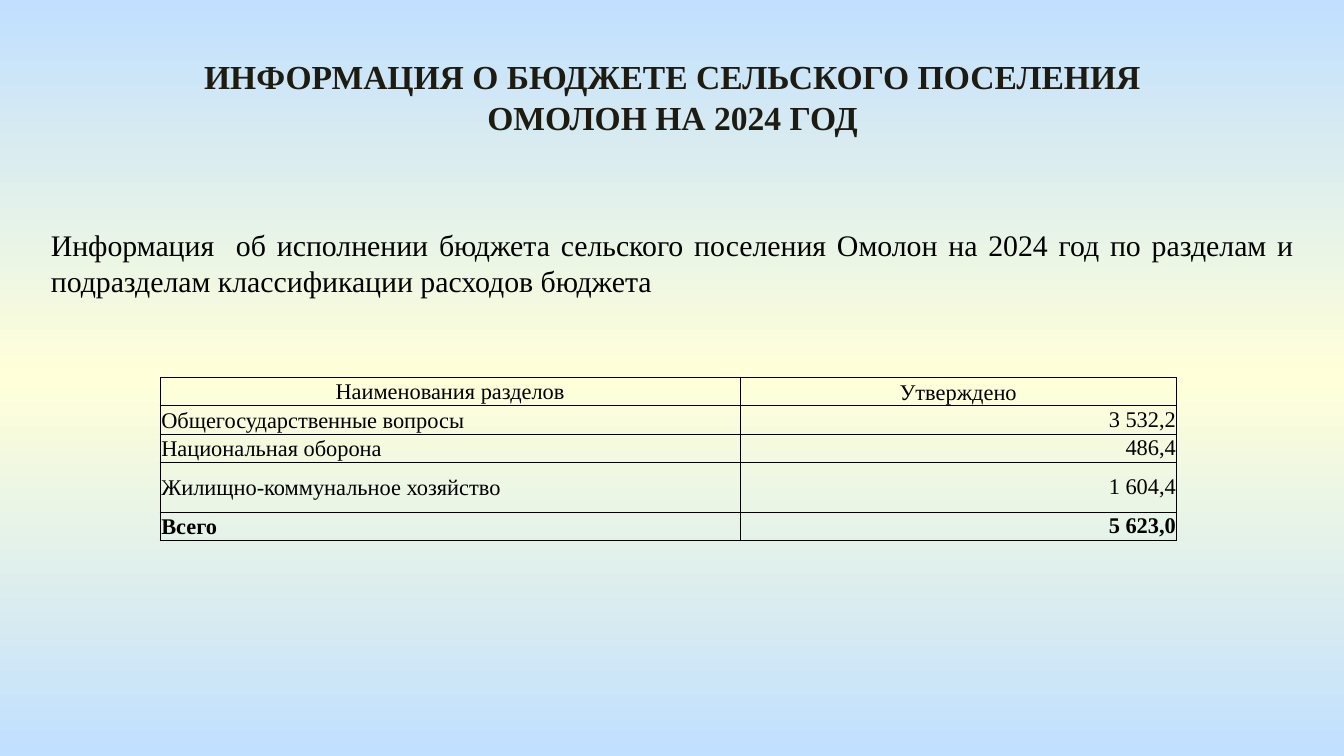
from copy import deepcopy
from typing import NamedTuple

from lxml import etree
from pptx import Presentation
from pptx.dml.color import RGBColor
from pptx.enum.text import MSO_ANCHOR, PP_ALIGN
from pptx.oxml.ns import qn
from pptx.util import Inches, Pt

LEFT, MID, RIGHT, JUST = PP_ALIGN.LEFT, PP_ALIGN.CENTER, PP_ALIGN.RIGHT, PP_ALIGN.JUSTIFY
CENTRE, BOTTOM = MSO_ANCHOR.MIDDLE, MSO_ANCHOR.BOTTOM

BLUE = RGBColor(0xC1, 0xE0, 0xFF)
CREAM = RGBColor(0xFF, 0xFF, 0xD9)
BLACK = RGBColor(0, 0, 0)
DARK = RGBColor(0x1E, 0x1C, 0x11)
FACE = "Times New Roman"
WIDTH = 10


class Block(NamedTuple):
    box: tuple[float, float, float, float]
    lines: list[str]
    align: PP_ALIGN
    size: int
    color: RGBColor
    bold: bool = False


class Row(NamedTuple):
    name: str
    value: str
    height: float = 0.19
    bold: bool = False


LEAD = Block((0.28, 1.64, 9.45, 0.64),
             ["Информация  об исполнении бюджета сельского поселения Омолон на 2024 год "
              "по разделам и подразделам классификации расходов бюджета"],
             JUST, 16, BLACK)
TITLE = Block((0.63, 0.37, 8.75, 0.71),
              ["ИНФОРМАЦИЯ О БЮДЖЕТЕ СЕЛЬСКОГО ПОСЕЛЕНИЯ", "ОМОЛОН НА 2024 ГОД"],
              MID, 18, DARK, True)
ROWS = [
    Row("Наименования разделов", "Утверждено"),
    Row("Общегосударственные вопросы", "3 532,2", 0.2),
    Row("Национальная оборона", "486,4"),
    Row("Жилищно-коммунальное хозяйство", "1 604,4", 0.37),
    Row("Всего", "5 623,0", bold=True),
]
COLS = [4.32, 3.24]


def write(frame, lines: list[str], align: PP_ALIGN, size: int, color: RGBColor, bold: bool) -> None:
    frame.text = "\n".join(lines)
    for para in frame.paragraphs:
        para.alignment = align
        font = para.runs[0].font
        for key, val in {"name": FACE, "size": Pt(size), "bold": bold}.items():
            setattr(font, key, val)
        font.color.rgb = color


def paint(slide) -> None:
    fill = slide.background.fill
    fill.gradient()
    fill.gradient_angle = 90
    stops = slide.element.find(".//" + qn("a:gsLst"))
    stops.insert(1, deepcopy(stops[0]))
    for stop, pos, color in zip(fill.gradient_stops, (0, 0.5, 1), (BLUE, CREAM, BLUE)):
        stop.position = pos
        stop.color.rgb = color


def add_block(slide, block: Block) -> None:
    frame = slide.shapes.add_textbox(*map(Inches, block.box)).text_frame
    frame.word_wrap = True
    write(frame, *block[1:])


def rule(cell) -> None:
    props = cell._tc.get_or_add_tcPr()
    for i, side in enumerate(("lnL", "lnR", "lnT", "lnB")):
        line = etree.Element(qn("a:" + side), w=str(Pt(0.5)))
        fill = etree.SubElement(line, qn("a:solidFill"))
        etree.SubElement(fill, qn("a:srgbClr"), val=str(BLACK))
        props.insert(i, line)


def add_grid(slide, rows: list[Row]) -> None:
    size = (1.19, 2.81, sum(COLS), sum(row.height for row in rows))
    grid = slide.shapes.add_table(len(rows), len(COLS), *map(Inches, size)).table
    grid.first_row = grid.horz_banding = False
    for col, width in zip(grid.columns, COLS):
        col.width = Inches(width)
    for r, row in enumerate(rows):
        grid.rows[r].height = Inches(row.height)
        for c, text in enumerate((row.name, row.value)):
            cell = grid.cell(r, c)
            inset = Inches(0 if r and c else 0.01)
            look = {"margin_left": inset, "margin_right": inset, "margin_top": inset,
                    "margin_bottom": 0,
                    "vertical_anchor": BOTTOM if c and not r else CENTRE}
            for key, val in look.items():
                setattr(cell, key, val)
            align = MID if r == 0 else (LEFT, RIGHT)[c]
            write(cell.text_frame, [text], align, 12, BLACK, row.bold)
            cell.fill.background()
            rule(cell)


def main() -> None:
    deck = Presentation()
    deck.slide_width, deck.slide_height = Inches(WIDTH), Inches(WIDTH * 9 / 16)
    slide = deck.slides.add_slide(deck.slide_layouts[6])

    # Background
    paint(slide)

    # Lead text, budget table, heading
    add_block(slide, LEAD)
    add_grid(slide, ROWS)
    add_block(slide, TITLE)
    deck.save("out.pptx")


if __name__ == "__main__":
    main()
